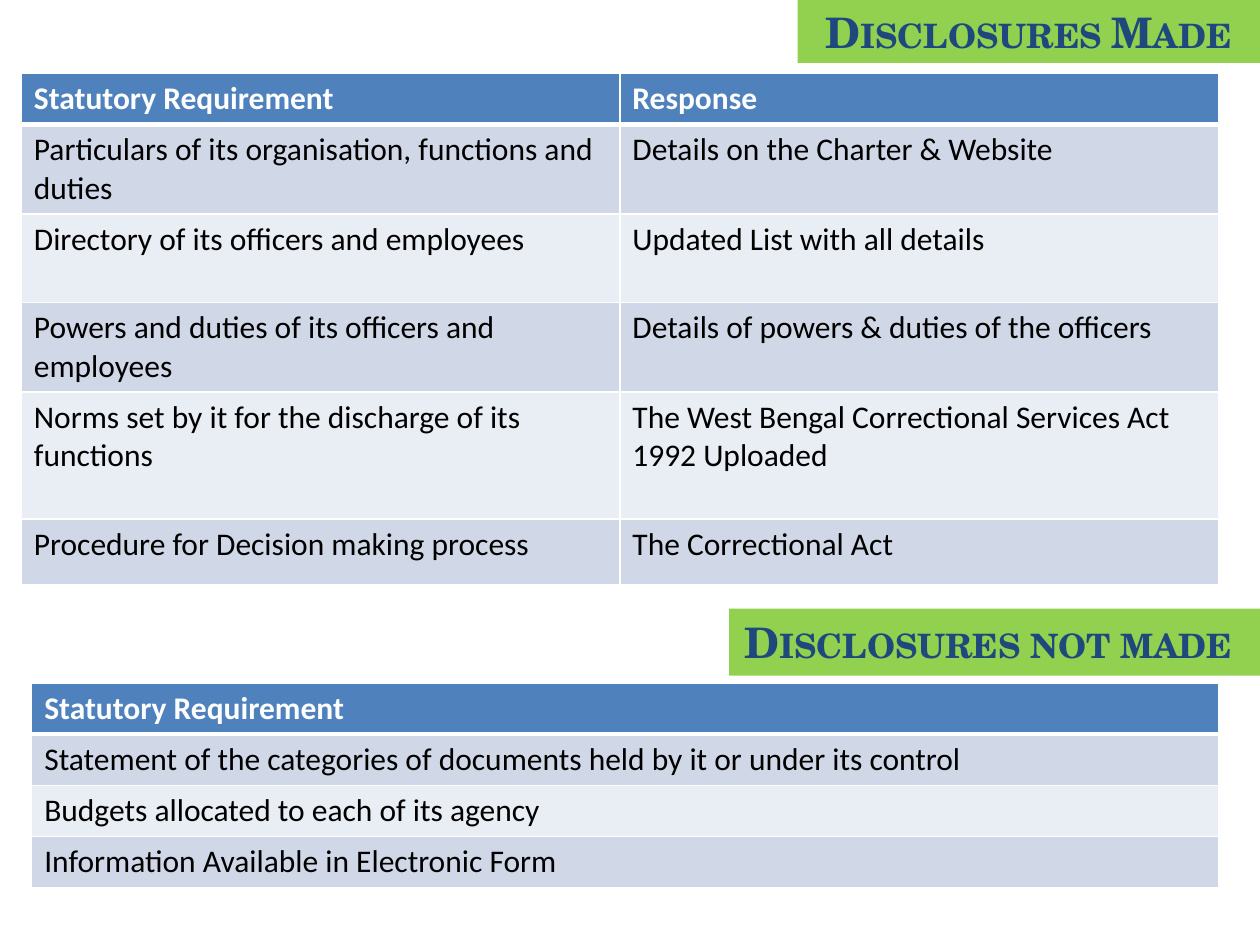
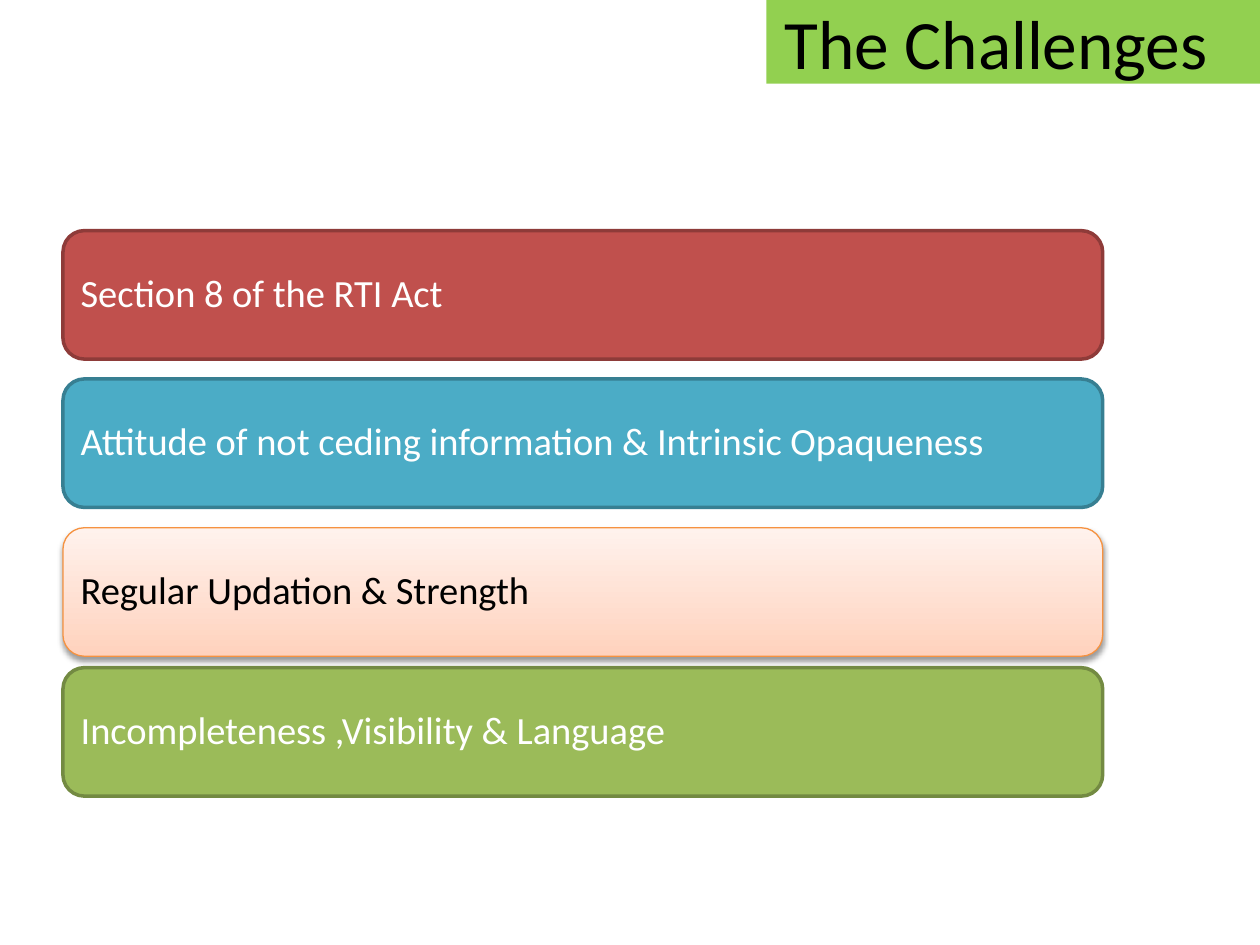
import pptx
import pptx.dml.color
import pptx.enum.shapes
import pptx.enum.text
import pptx.oxml
import pptx.util
from lxml import etree
from pptx.util import Cm

DRAWING_NS = "http://schemas.openxmlformats.org/drawingml/2006/main"
BLANK_LAYOUT = 6
SHAPES = pptx.enum.shapes.MSO_SHAPE
ALIGN = pptx.enum.text.PP_ALIGN
MIDDLE = pptx.enum.text.MSO_ANCHOR.MIDDLE

DISCLOSURES_MADE = [
    ("Statutory Requirement", "Response"),
    ("Particulars of its organisation, functions and duties",
     "Details on the Charter & Website"),
    ("Directory of its officers and employees", "Updated List with all details"),
    ("Powers and duties of its officers and employees",
     "Details of powers & duties of the officers"),
    ("Norms set by it for the discharge of its functions",
     "The West Bengal Correctional Services Act 1992 Uploaded"),
    ("Procedure for Decision making process", "The Correctional Act"),
]
DISCLOSURES_NOT_MADE = [
    ("Statutory Requirement",),
    ("Statement of the categories of documents held by it or under its control",),
    ("Budgets allocated to each of its agency",),
    ("Information Available in Electronic Form",),
]


def rgb(hex_colour):
    return pptx.dml.color.RGBColor.from_string(hex_colour)


def add_xml(parent, xml):
    parent.append(pptx.oxml.parse_xml(xml))


class Deck:
    BODY_FONT = "Calibri"
    HEADING_FONT = "TeX Gyre Schola"
    BLACK, WHITE, NAVY = "000000", "FFFFFF", "1F497D"
    BANNER = "92D050"
    HEADER = "4F81BD"
    BANDS = ("D0D8E8", "E9EDF4")

    def __init__(self):
        self.presentation = pptx.Presentation()
        self.presentation.slide_width = Cm(25.4)
        self.presentation.slide_height = Cm(19.05)
        self.slide = None

    def new_slide(self):
        layout = self.presentation.slide_layouts[BLANK_LAYOUT]
        self.slide = self.presentation.slides.add_slide(layout)

    def style_font(self, paragraph, size, colour, name=BODY_FONT, bold=False):
        font = paragraph.font
        font.name, font.size, font.bold = name, pptx.util.Pt(size), bold
        font.color.rgb = rgb(colour)

    def panel(self, preset, left, top, width, height, text):
        """Add a flat shape with one line of vertically centred text."""
        panel = self.slide.shapes.add_shape(
            preset, Cm(left), Cm(top), Cm(width), Cm(height))
        panel.shadow.inherit = False
        panel.text_frame.text = text
        panel.text_frame.vertical_anchor = MIDDLE
        return panel

    def banner(self, text, left, top, height, right_inset=0.25, small_caps=True):
        """Add a green heading that runs to the right edge of the slide."""
        banner = self.panel(SHAPES.RECTANGLE, left, top, 25.4 - left, height, text)
        banner.fill.solid()
        banner.fill.fore_color.rgb = rgb(self.BANNER)
        banner.line.fill.background()
        banner.text_frame.margin_right = Cm(right_inset)
        heading = banner.text_frame.paragraphs[0]
        heading.alignment = ALIGN.CENTER
        if small_caps:
            self.style_font(heading, 24, self.NAVY, self.HEADING_FONT, bold=True)
            heading.runs[0].font._element.set("cap", "small")
        else:
            self.style_font(heading, 39.6, self.BLACK)

    def table(self, rows, left, top, width, row_heights):
        columns = len(rows[0])
        table = self.slide.shapes.add_table(
            len(rows), columns, Cm(left), Cm(top), Cm(width),
            Cm(sum(row_heights))).table
        table.horz_banding = False
        for column in table.columns:
            column.width = Cm(width / columns)
        for index, (texts, height) in enumerate(zip(rows, row_heights)):
            table.rows[index].height = Cm(height)
            for cell, text in zip(table.rows[index].cells, texts):
                self.fill_cell(cell, text, index)

    def fill_cell(self, cell, text, row):
        is_header = row == 0
        cell.text = text
        self.style_font(cell.text_frame.paragraphs[0], 18,
                        self.WHITE if is_header else self.BLACK, bold=is_header)
        for side in "LRTB":
            heavy = (side == "B" and is_header) or (side == "T" and row == 1)
            add_xml(cell._tc.get_or_add_tcPr(),
                    f'<a:ln{side} xmlns:a="{DRAWING_NS}" w="{38100 if heavy else 12700}">'
                    f'<a:solidFill><a:srgbClr val="{self.WHITE}"/></a:solidFill>'
                    f'</a:ln{side}>')
        cell.fill.solid()
        cell.fill.fore_color.rgb = rgb(
            self.HEADER if is_header else self.BANDS[(row - 1) % 2])

    def card(self, text, top, fill, line, light=False):
        """Add a rounded bar; a light one has a gradient, a shadow and dark text."""
        card = self.panel(SHAPES.ROUNDED_RECTANGLE, 1.27, top, 20.96, 2.59, text)
        card.line.color.rgb = rgb(line)
        card.line.width = pptx.util.Pt(0.75 if light else 2)
        if light:
            card.fill.gradient()
            card.fill.gradient_angle = 90
            for stop, colour in zip(card.fill.gradient_stops, fill):
                stop.color.rgb = rgb(colour)
            self.drop_shadow(card)
        else:
            card.fill.solid()
            card.fill.fore_color.rgb = rgb(fill)
        card.text_frame.word_wrap = True
        card.text_frame.margin_left = card.text_frame.margin_right = Cm(0.23)
        label = card.text_frame.paragraphs[0]
        label.alignment = ALIGN.LEFT
        label.line_spacing = 0.9
        self.style_font(label, 22, self.BLACK if light else self.WHITE)

    def drop_shadow(self, shape):
        effects = shape._element.spPr.find(etree.QName(DRAWING_NS, "effectLst").text)
        add_xml(effects,
                f'<a:outerShdw xmlns:a="{DRAWING_NS}" blurRad="40000" dist="20000" '
                f'dir="5400000" rotWithShape="0"><a:srgbClr val="{self.BLACK}">'
                '<a:alpha val="38000"/></a:srgbClr></a:outerShdw>')


def add_disclosures(deck):
    deck.new_slide()
    deck.banner("Disclosures not made", 14.7, 12.27, 1.35, right_inset=0.5)
    deck.table(DISCLOSURES_NOT_MADE, 0.64, 13.77, 23.92, [1.03] * 4)
    deck.banner("Disclosures Made", 16.08, 0, 1.27)
    deck.table(DISCLOSURES_MADE, 0.43, 1.48, 24.13,
               [1.02, 1.78, 1.78, 1.78, 2.56, 1.33])


def add_challenges(deck):
    deck.new_slide()
    deck.banner("The Challenges", 15.45, 0, 1.69, right_inset=0.94, small_caps=False)
    deck.card("Section 8 of the RTI Act", 4.65, "C0504D", "8E3B39")
    deck.card("Attitude of not ceding information & Intrinsic Opaqueness",
              7.64, "4BACC6", "377F92")
    deck.card("Regular Updation & Strength", 10.64, ("FFD2BD", "FFF2ED"), "F69240",
              light=True)
    deck.card("Incompleteness ,Visibility & Language", 13.46, "9BBB59", "738A42")


def main():
    deck = Deck()
    add_disclosures(deck)
    add_challenges(deck)
    deck.presentation.save("out.pptx")


if __name__ == "__main__":
    main()
